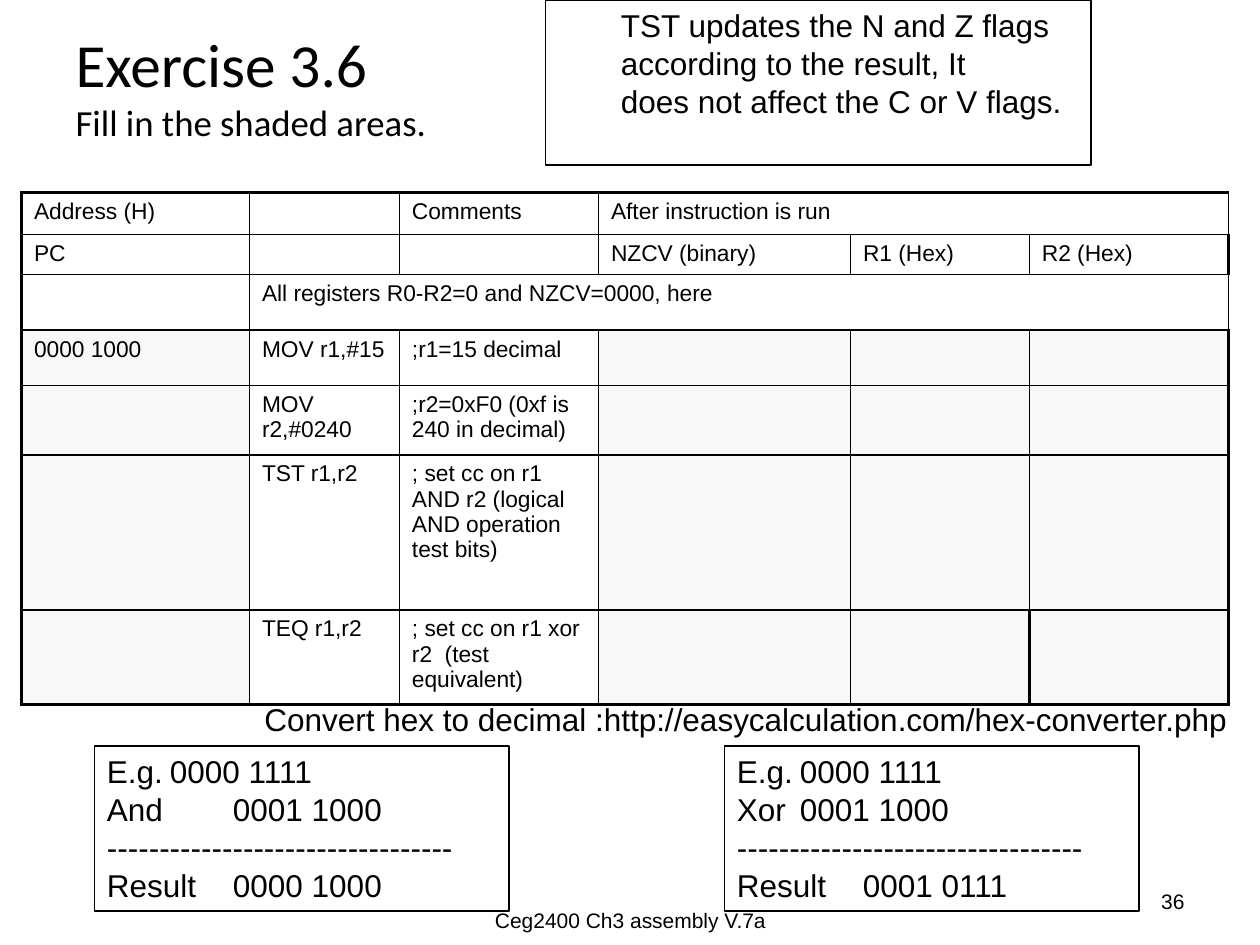
from lxml.etree import SubElement
from pptx import Presentation
from pptx.dml.color import RGBColor
from pptx.enum.shapes import MSO_SHAPE
from pptx.enum.text import MSO_ANCHOR as ANCHOR, MSO_AUTO_SIZE as AUTO, PP_ALIGN as ALIGN
from pptx.oxml.ns import qn
from pptx.util import Inches, Pt

BLACK = RGBColor(0, 0, 0)
WHITE = RGBColor(255, 255, 255)
SHADE = RGBColor(0xF8, 0xF8, 0xF8)

COLS = [1.81, 1.19, 1.58, 2, 1.42, 1.58]
HEIGHTS = [0.33, 0.32, 0.44, 0.44, 0.55, 1.23, 0.75]
ROWS = [
    ["Address (H)", "", "Comments", "After instruction is run", "", ""],
    ["PC", "", "", "NZCV (binary)", "R1 (Hex)", "R2 (Hex)"],
    ["", "All registers R0-R2=0 and NZCV=0000, here", "", "", "", ""],
    ["0000 1000", "MOV r1,#15", ";r1=15 decimal", "", "", ""],
    ["", "MOV r2,#0240", ";r2=0xF0 (0xf is 240 in decimal)", "", "", ""],
    ["", "TST r1,r2", "; set cc on r1 AND r2 (logical AND operation test bits)", "", "", ""],
    ["", "TEQ r1,r2", "; set cc on r1 xor r2  (test equivalent)", "", "", ""],
]
MERGES = [(0, 3), (2, 1)]
FIRST_SHADED_ROW = 3
SHADED_COLS = (0, 3, 4, 5)


def add_text(p, text, size=18, font="Arial", align=None, indent=0):
    """Add a formatted run to a paragraph."""
    if align is not None:
        p.alignment = align
    if indent:
        p.level = 1
        pPr = p._p.get_or_add_pPr()
        pPr.set("marL", str(Inches(indent)))
        pPr.set("indent", "0")
    r = p.add_run()
    r.text = text
    r.font.size, r.font.name = Pt(size), font
    r.font.color.rgb = BLACK


class SlideBuilder:
    """Hold the style and the current slide."""

    thin, thick, cell_size = 1, 2.25, 13

    def __init__(self, prs):
        """Start a slide with a title placeholder."""
        self.s = prs.slides.add_slide(prs.slide_layouts[5])

    def title(self, heading, subtitle, box):
        """Fill the title placeholder with a heading and a smaller line."""
        sp = self.s.shapes.title
        sp.left, sp.top, sp.width, sp.height = map(Inches, box)
        tf = sp.text_frame
        tf.auto_size, tf.vertical_anchor = AUTO.NONE, ANCHOR.MIDDLE
        tf.margin_bottom = Inches(0.38)
        p = tf.paragraphs[0]
        add_text(p, heading, size=35, font="Calibri", align=ALIGN.LEFT)
        p.add_line_break()
        add_text(p, subtitle, size=21, font="Calibri")

    def label(self, text, box, wrap=True, anchor=ANCHOR.MIDDLE, **fmt):
        """Add a plain line of text."""
        tf = self.s.shapes.add_textbox(*map(Inches, box)).text_frame
        tf.word_wrap, tf.vertical_anchor = wrap, anchor
        add_text(tf.paragraphs[0], text, **fmt)

    def note(self, lines, box, **fmt):
        """Add an outlined box with one paragraph per line."""
        sp = self.s.shapes.add_shape(MSO_SHAPE.RECTANGLE, *map(Inches, box))
        sp.shadow.inherit = False
        sp.fill.background()
        sp.line.color.rgb, sp.line.width = BLACK, Pt(0.75)
        tf = sp.text_frame
        tf.word_wrap, tf.vertical_anchor = True, ANCHOR.TOP
        for i, line in enumerate(lines):
            p = tf.add_paragraph() if i else tf.paragraphs[0]
            add_text(p, line, align=ALIGN.LEFT, **fmt)

    def borders(self, cell, edges):
        """Draw the four cell borders ahead of the fill."""
        tcPr = cell._tc.get_or_add_tcPr()
        for i, (side, width) in enumerate(edges.items()):
            ln = tcPr.makeelement(qn(f"a:ln{side}"), {"w": str(Pt(width))})
            fill = SubElement(ln, qn("a:solidFill"))
            SubElement(fill, qn("a:srgbClr"), val=str(BLACK))
            tcPr.insert(i, ln)

    def table(self, left, top):
        """Add the exercise table with shaded answer cells."""
        size = Inches(sum(COLS)), Inches(sum(HEIGHTS))
        tbl = self.s.shapes.add_table(len(ROWS), len(COLS), Inches(left), Inches(top), *size).table
        for col, width in zip(tbl.columns, COLS):
            col.width = Inches(width)
        for row, height in zip(tbl.rows, HEIGHTS):
            row.height = Inches(height)
        last_row, last_col = len(ROWS) - 1, len(COLS) - 1
        for r, texts in enumerate(ROWS):
            for c, text in enumerate(texts):
                cell = tbl.cell(r, c)
                shaded = r >= FIRST_SHADED_ROW and c in SHADED_COLS
                cell.fill.solid()
                cell.fill.fore_color.rgb = SHADE if shaded else WHITE
                p = cell.text_frame.paragraphs[0]
                if text:
                    add_text(p, text, size=self.cell_size)
                else:
                    SubElement(p._p, qn("a:endParaRPr"), sz=str(self.cell_size * 100))
                heavy = {
                    "L": c == 0 or (r, c) == (last_row, last_col),
                    "R": c == last_col or (r, c) == (last_row, last_col - 1),
                    "T": r == 0,
                    "B": r == last_row,
                }
                self.borders(cell, {k: self.thick if v else self.thin for k, v in heavy.items()})
        for r, c in MERGES:
            tbl.cell(r, c).merge(tbl.cell(r, last_col))


def main():
    """Build the exercise slide."""
    prs = Presentation()
    prs.slide_width, prs.slide_height = Inches(10), Inches(7.5)
    b = SlideBuilder(prs)
    b.title("Exercise 3.6 ", "Fill in the shaded areas.", (0.5, 0.13, 8.25, 1.42))
    b.table(0.17, 1.53)
    b.label("Ceg2400 Ch3 assembly V.7a", (3.42, 7.1, 3.17, 0.4), size=12, align=ALIGN.CENTER)
    b.label("36", (7.17, 6.95, 2.33, 0.4), size=12, align=ALIGN.RIGHT)
    b.note(
        ["TST updates the N and Z flags according to the result, It",
         "does not affect the C or V flags."],
        (4.33, 0, 4.33, 1.31), indent=0.5)
    for left, operator, result in [(0.75, "And", "0000 1000"), (5.75, "Xor", "0001 0111")]:
        b.note(
            ["E.g.\t0000 1111", f"{operator} \t0001 1000", "-" * 33, f"Result\t{result}"],
            (left, 5.92, 3.29, 1.31))
    b.label("Convert hex to decimal :http://easycalculation.com/hex-converter.php",
            (2, 5.51, 8.04, 0.4), wrap=False, anchor=ANCHOR.TOP)
    prs.save("out.pptx")


if __name__ == "__main__":
    main()
